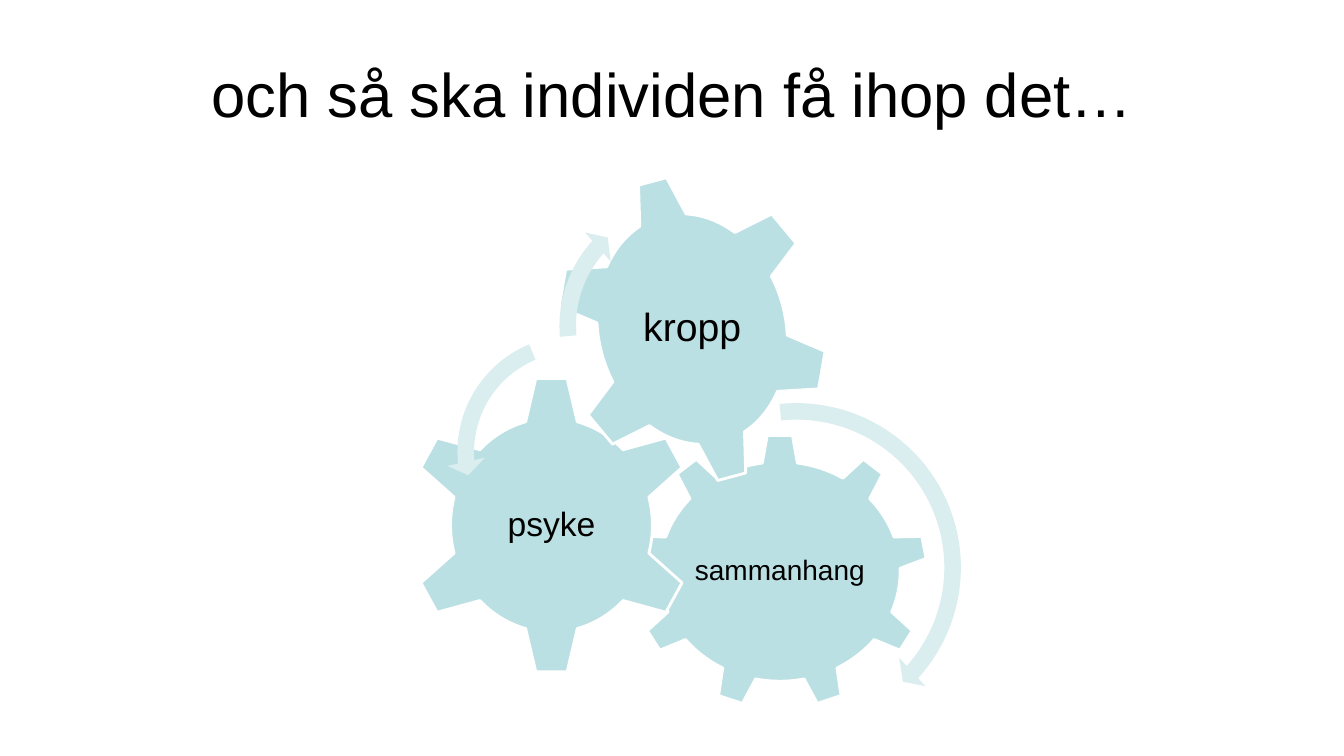
from dataclasses import dataclass

from pptx import Presentation
from pptx.dml.color import RGBColor as Rgb
from pptx.enum.shapes import MSO_SHAPE as Kind
from pptx.enum.text import MSO_ANCHOR as Anchor, PP_ALIGN as Align
from pptx.util import Inches, Pt


@dataclass(frozen=True)
class Theme:
    font: str = "Arial"
    ink: Rgb = Rgb(0, 0, 0)
    paper: Rgb = Rgb(255, 255, 255)
    gear: Rgb = Rgb(0xBB, 0xE0, 0xE3)
    arrow: Rgb = Rgb(0xDA, 0xED, 0xEF)
    title: int = 44
    large: int = 28
    medium: int = 24
    small: int = 20


THEME = Theme()

# Gears: text, shape, left, top, width, height, turn, type size
GEARS = [
    ("sammanhang", Kind.GEAR_9, 2.23, 2.6, 2.93, 2.72, 0, THEME.small),
    ("psyke", Kind.GEAR_6, 0, 2.01, 2.86, 2.98, 0, THEME.medium),
    ("kropp", Kind.GEAR_6, 1.5, 0, 2.65, 3.11, 345, THEME.large),
]

# Arrows: shape, left, top, side, band, head angle, end, start, head width
ARROWS = [
    (Kind.CIRCULAR_ARROW, 2.12, 2.18, 3.48, 0.047, 4.98, 42.06, 264.09, 0.055),
    (Kind.LEFT_CIRCULAR_ARROW, 0.39, 1.51, 2.53, 0.065, 7.17, 174.82, 247.3, 0.075),
    (Kind.CIRCULAR_ARROW, 1.4, 0.16, 2.73, 0.06, 6.57, 221.9, 175.14, 0.07),
]


def write(frame, text, size, space=1.0, inset=None):
    frame.word_wrap = True
    frame.vertical_anchor = Anchor.MIDDLE
    if inset is not None:
        frame.margin_left = frame.margin_right = Inches(inset)
        frame.margin_top = frame.margin_bottom = Inches(inset)
    para = frame.paragraphs[0]
    para.alignment = Align.CENTER
    para.line_spacing = space
    run = para.add_run()
    run.text = text
    run.font.name = THEME.font
    run.font.size = Pt(size)
    run.font.color.rgb = THEME.ink


def place(slide, kind, box, fill):
    shape = slide.shapes.add_shape(kind, *map(Inches, box))
    shape.shadow.inherit = False
    shape.fill.solid()
    shape.fill.fore_color.rgb = fill
    return shape


def add_title(slide, box, text):
    title = slide.shapes.title
    title.left, title.top, title.width, title.height = map(Inches, box)
    write(title.text_frame, text, THEME.title)


def add_gear(slide, box, kind, text, turn, size):
    gear = place(slide, kind, box, THEME.gear)
    gear.rotation = turn
    gear.line.color.rgb = THEME.paper
    gear.line.width = Pt(2)
    # Upright label centred on the gear
    left, top, wide, high = box
    inner = (left + wide * 0.2, top + high * 0.25, wide * 0.6, high * 0.5)
    label = slide.shapes.add_textbox(*map(Inches, inner))
    write(label.text_frame, text, size, space=0.9, inset=0.03)


def add_arrow(slide, box, kind, band, head, end, start, wing):
    arrow = place(slide, kind, box, THEME.arrow)
    arrow.line.fill.background()
    # Angles are stored in 60000ths of a degree, adjustments in 100000ths
    values = (band, head * 0.6, end * 0.6, start * 0.6, wing)
    for i, value in enumerate(values):
        arrow.adjustments[i] = value


def add_gears(slide, left, top):
    for text, kind, x, y, wide, high, turn, size in GEARS:
        add_gear(slide, (left + x, top + y, wide, high), kind, text, turn, size)
    for kind, x, y, side, *bend in ARROWS:
        add_arrow(slide, (left + x, top + y, side, side), kind, *bend)


def main():
    deck = Presentation()
    deck.slide_width, deck.slide_height = Inches(13.33), Inches(7.5)
    slide = deck.slides.add_slide(deck.slide_layouts[5])
    add_title(slide, (0.67, 0.3, 12, 1.25), "och så ska individen få ihop det…")
    add_gears(slide, 4.04, 1.71)
    deck.save("out.pptx")


if __name__ == "__main__":
    main()
